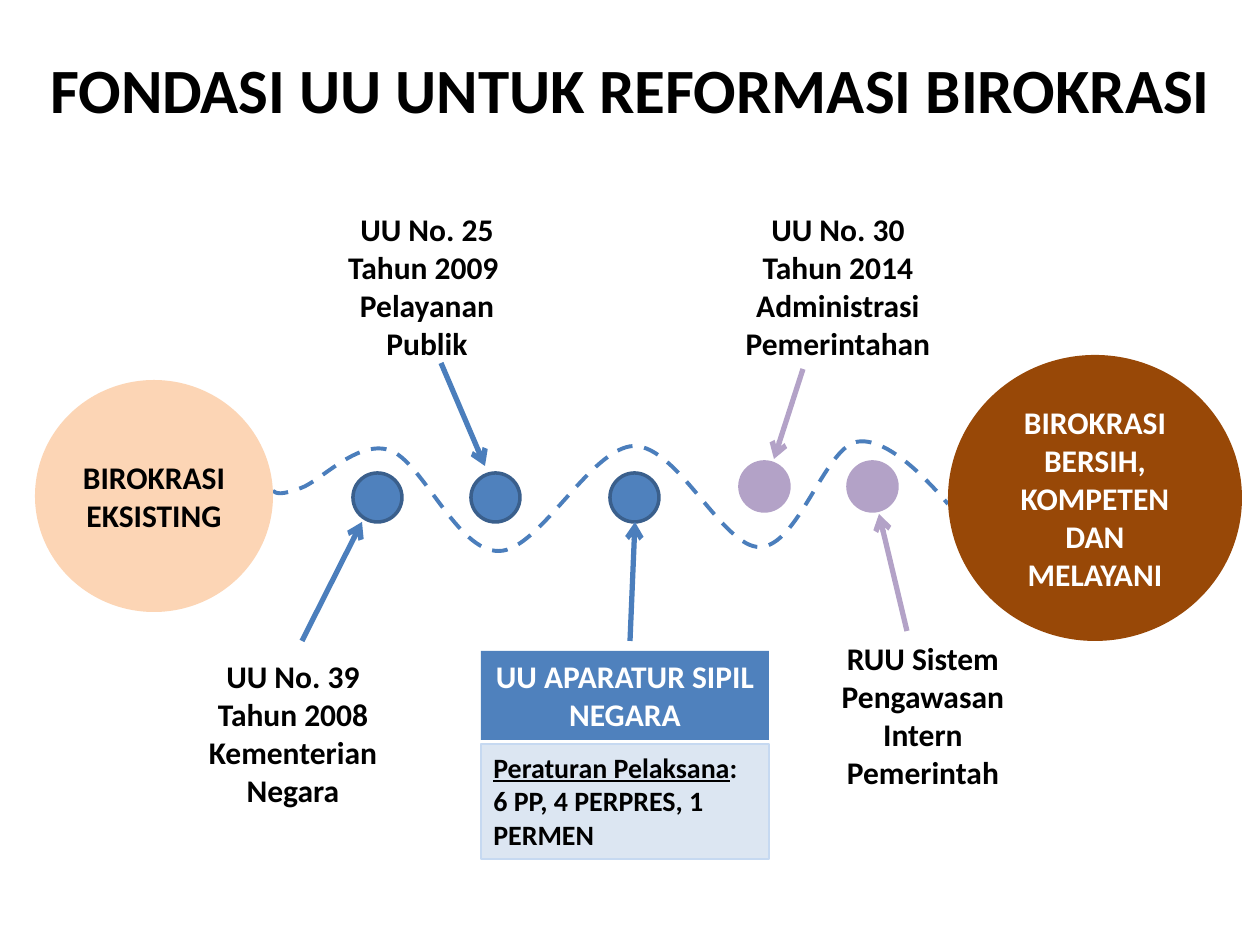
from pptx import Presentation
from pptx import util as u
from pptx.dml.color import RGBColor
from pptx.enum import dml, shapes, text
from pptx.oxml import ns, xmlchemy
from lxml import etree

THEME = {
    "font": "Calibri", "title": 36, "body": 18, "small": 16,
    "black": "000000", "white": "FFFFFF", "peach": "FCD5B5", "brown": "984807",
    "blue": "4F81BD", "navy": "3A5F8C", "stroke": "4B7EBC", "purple": "B3A2C7",
    "pale": "DCE6F2", "edge": "C6D9F1",
}
PX = 914400 / 126
DOT = 49

TITLE = ("FONDASI UU UNTUK REFORMASI BIROKRASI", (35, 31, 1191, 115))
STATES = [
    ("BIROKRASI EKSISTING", (35, 380, 238, 232), "peach", "black"),
    ("BIROKRASI BERSIH, KOMPETEN DAN MELAYANI", (948, 355, 294, 286), "brown", "white"),
]
LAWS = [
    (["UU No. 39 Tahun 2008 Kementerian Negara"], (194, 651, 198, 165)),
    (["UU No. 25 Tahun 2009 ", "Pelayanan Publik"], (323, 204, 208, 165)),
    (["UU No. 30 Tahun 2014 Administrasi Pemerintahan"], (719, 204, 238, 165)),
    (["RUU Sistem Pengawasan Intern Pemerintah"], (809, 633, 228, 165)),
]
MILESTONES = [
    ((353, 473), (302, 641), (362, 522), "blue", "navy", "stroke"),
    ((471, 473), (441, 363), (485, 466), "blue", "navy", "stroke"),
    ((610, 473), (630, 641), (635, 522), "blue", "navy", "stroke"),
    ((740, 462), (803, 369), (774, 459), "purple", "purple", "purple"),
    ((848, 462), (907, 631), (879, 514), "purple", "purple", "purple"),
]
ASN = (["UU APARATUR SIPIL NEGARA"], (481, 651, 288, 89))
RULES = (["Peraturan Pelaksana:", "6 PP, 4 PERPRES, 1 PERMEN"], (481, 744, 288, 115))
UNDERLINED = "Peraturan Pelaksana"
WAVE_START = (273, 491)
WAVE = [
    (277, 494), (282, 495), (301, 488), (321, 481), (357, 440), (389, 450),
    (422, 460), (457, 552), (499, 551), (539, 551), (591, 447), (634, 446),
    (678, 446), (723, 548), (760, 547), (798, 546), (824, 450), (856, 442),
    (887, 435), (931, 484), (948, 504),
]


def emu(*values):
    return [round(v * PX) for v in values]


def rgb(name):
    return RGBColor.from_string(THEME[name])


def write(sp, lines, size="body", color="black", align=text.PP_ALIGN.CENTER,
          anchor=text.MSO_ANCHOR.TOP):
    tf = sp.text_frame
    tf.word_wrap = True
    tf.vertical_anchor = anchor
    tf.text = "\n".join(lines)
    for p in tf.paragraphs:
        p.alignment = align
        for r in p.runs:
            style(r, size, color)


def style(r, size, color):
    r.font.name = THEME["font"]
    r.font.size = u.Pt(THEME[size])
    r.font.bold = True
    r.font.color.rgb = rgb(color)


def stroke(line, color, width):
    line.color.rgb = rgb(color)
    line.width = u.Pt(width)


def add_block(s, kind, box, fill, edge=None, width=2):
    sp = s.shapes.add_shape(kind, *emu(*box))
    sp.shadow.inherit = False
    sp.fill.solid()
    sp.fill.fore_color.rgb = rgb(fill)
    if edge:
        stroke(sp.line, edge, width)
    else:
        sp.line.fill.background()
    return sp


def add_wave(s):
    builder = s.shapes.build_freeform(*WAVE_START, scale=PX)
    builder.add_line_segments(WAVE, close=False)
    sp = builder.convert_to_shape()
    sp.shadow.inherit = False
    sp.fill.background()
    stroke(sp.line, "stroke", 2.25)
    sp.line.dash_style = dml.MSO_LINE.DASH
    segments = list(sp._element.iter(ns.qn("a:lnTo")))
    for i in range(0, len(segments), 3):
        curve = xmlchemy.OxmlElement("a:cubicBezTo")
        segments[i].addprevious(curve)
        for segment in segments[i:i + 3]:
            curve.append(segment[0])
            segment.getparent().remove(segment)


def add_arrow(s, start, end, color):
    c = s.shapes.add_connector(shapes.MSO_CONNECTOR.STRAIGHT, *emu(*start, *end))
    stroke(c.line, color, 3)
    etree.SubElement(c.line._get_or_add_ln(), ns.qn("a:tailEnd"), type="arrow")
    etree.SubElement(c._element.spPr, ns.qn("a:effectLst"))


def main():
    prs = Presentation()
    prs.slide_width, prs.slide_height = emu(1260, 945)
    s = prs.slides.add_slide(prs.slide_layouts[5])
    oval, rect = shapes.MSO_SHAPE.OVAL, shapes.MSO_SHAPE.RECTANGLE
    middle = text.MSO_ANCHOR.MIDDLE

    title = s.shapes.title
    title.left, title.top, title.width, title.height = emu(*TITLE[1])
    write(title, [TITLE[0]], "title", anchor=middle)

    add_wave(s)
    for label, box, fill, color in STATES:
        write(add_block(s, oval, box, fill), [label], color=color, anchor=middle)
    for lines, box in LAWS:
        write(s.shapes.add_textbox(*emu(*box)), lines)
    for corner, start, end, fill, edge, arrow in MILESTONES:
        add_block(s, oval, (*corner, DOT, DOT), fill, edge)
        add_arrow(s, start, end, arrow)

    write(add_block(s, rect, ASN[1], "blue"), ASN[0], color="white")
    rules = add_block(s, rect, RULES[1], "pale", "edge", 0.75)
    write(rules, RULES[0], "small", align=text.PP_ALIGN.LEFT)
    p = rules.text_frame.paragraphs[0]
    rest = p.add_run()
    rest.text = p.runs[0].text[len(UNDERLINED):]
    style(rest, "small", "black")
    p.runs[0].text = UNDERLINED
    p.runs[0].font.underline = True

    prs.save("out.pptx")


if __name__ == "__main__":
    main()
